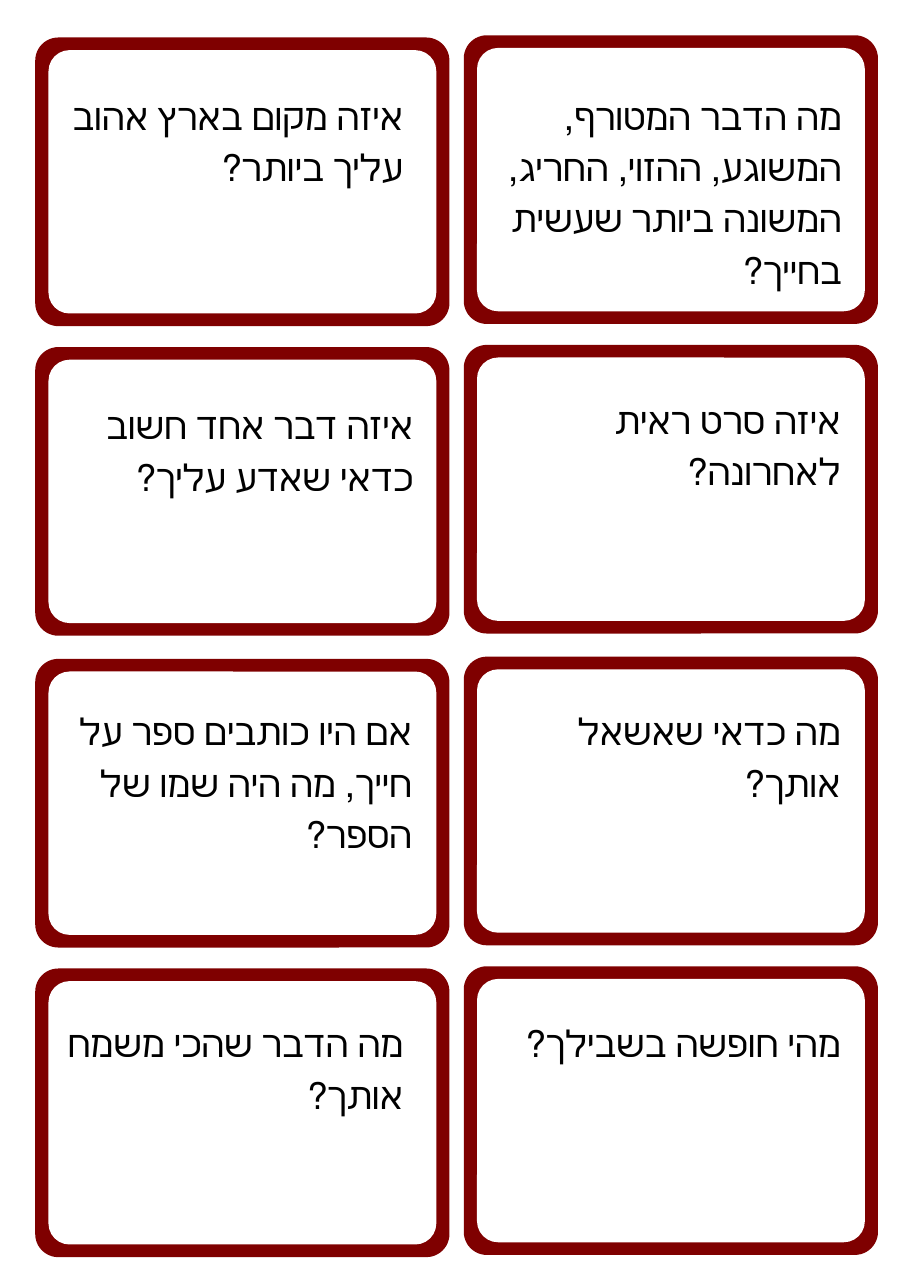
"""Build a sheet of eight question cards in Hebrew."""
from pptx import Presentation
from pptx.dml.color import RGBColor
from pptx.enum.shapes import MSO_SHAPE
from pptx.enum.text import MSO_AUTO_SIZE, PP_ALIGN
from pptx.util import Inches, Pt

ROUND = MSO_SHAPE.ROUNDED_RECTANGLE
RIGHT = PP_ALIGN.RIGHT
GROW = MSO_AUTO_SIZE.SHAPE_TO_FIT_TEXT
RED = RGBColor(0x7F, 0x00, 0x00)
WHITE = RGBColor(0xFF, 0xFF, 0xFF)
BLACK = RGBColor(0x00, 0x00, 0x00)

WIDE, HIGH = 3.76, 2.62
FACE_W, FACE_H = 3.52, 2.39
RIGHT_X, LEFT_X, DROP = 4.21, 0.32, 0.02
ROWS = [0.32, 3.13, 5.96, 8.77]
RIGHT_ASKS = [
    (4.43, 0.78, 3.21, 1.91, "מה הדבר המטורף, המשוגע, ההזוי, החריג, המשונה ביותר שעשית בחייך?"),
    (4.55, 3.54, 3.08, 0.89, "איזה סרט ראית לאחרונה?"),
    (4.55, 6.37, 3.08, 0.95, "מה כדאי שאשאל אותך?"),
    (4.55, 9.2, 3.08, 0.48, "מהי חופשה בשבילך?"),
]
LEFT_ASKS = [
    (0.58, 0.78, 3.08, 0.95, "איזה מקום בארץ אהוב עליך ביותר?"),
    (0.58, 3.59, 3.17, 0.95, "איזה דבר אחד חשוב כדאי שאדע עליך?"),
    (0.66, 6.37, 3.08, 1.41, "אם היו כותבים ספר על חייך, מה היה שמו של הספר?"),
    (0.58, 9.2, 3.08, 0.89, "מה הדבר שהכי משמח אותך?"),
]


class Sheet:
    """Hold the text style and the slide that the cards go on."""

    frame = {"margin_left": 0, "margin_right": 0, "margin_top": 0,
             "margin_bottom": 0, "word_wrap": True, "auto_size": GROW}
    para = {"alignment": RIGHT, "line_spacing": Pt(33.6)}
    font = {"name": "Roboto", "size": Pt(24)}

    def __init__(self, slide):
        self.slide = slide

    def apply(self, item, style):
        """Set each value of a style on an item."""
        for key, value in style.items():
            setattr(item, key, value)

    def panel(self, x, y, w, h, color):
        """Draw one plain rounded panel."""
        shape = self.slide.shapes.add_shape(ROUND, *map(Inches, (x, y, w, h)))
        shape.adjustments[0] = 0.08
        shape.shadow.inherit = False
        shape.fill.solid()
        shape.fill.fore_color.rgb = color
        shape.line.fill.background()

    def card(self, x, y):
        """Draw a red card with a white face in its middle."""
        self.panel(x, y, WIDE, HIGH, RED)
        self.panel(x + (WIDE - FACE_W) / 2, y + (HIGH - FACE_H) / 2,
                   FACE_W, FACE_H, WHITE)

    def ask(self, x, y, w, h, text):
        """Write one question from right to left."""
        box = self.slide.shapes.add_textbox(*map(Inches, (x, y, w, h)))
        self.apply(box.text_frame, self.frame)
        para = box.text_frame.paragraphs[0]
        self.apply(para, self.para)
        para._p.get_or_add_pPr().set("rtl", "1")
        run = para.add_run()
        run.text = text
        self.apply(run.font, self.font)
        run.font.color.rgb = BLACK


def main():
    """Lay out both columns and save the deck."""
    deck = Presentation()
    deck.slide_width = Inches(8.26)
    deck.slide_height = Inches(11.69)
    sheet = Sheet(deck.slides.add_slide(deck.slide_layouts[6]))
    for x, drop, asks in ((RIGHT_X, 0, RIGHT_ASKS), (LEFT_X, DROP, LEFT_ASKS)):
        for y, ask in zip(ROWS, asks):
            sheet.card(x, y + drop)
            sheet.ask(*ask)
    deck.save("out.pptx")


if __name__ == "__main__":
    main()
